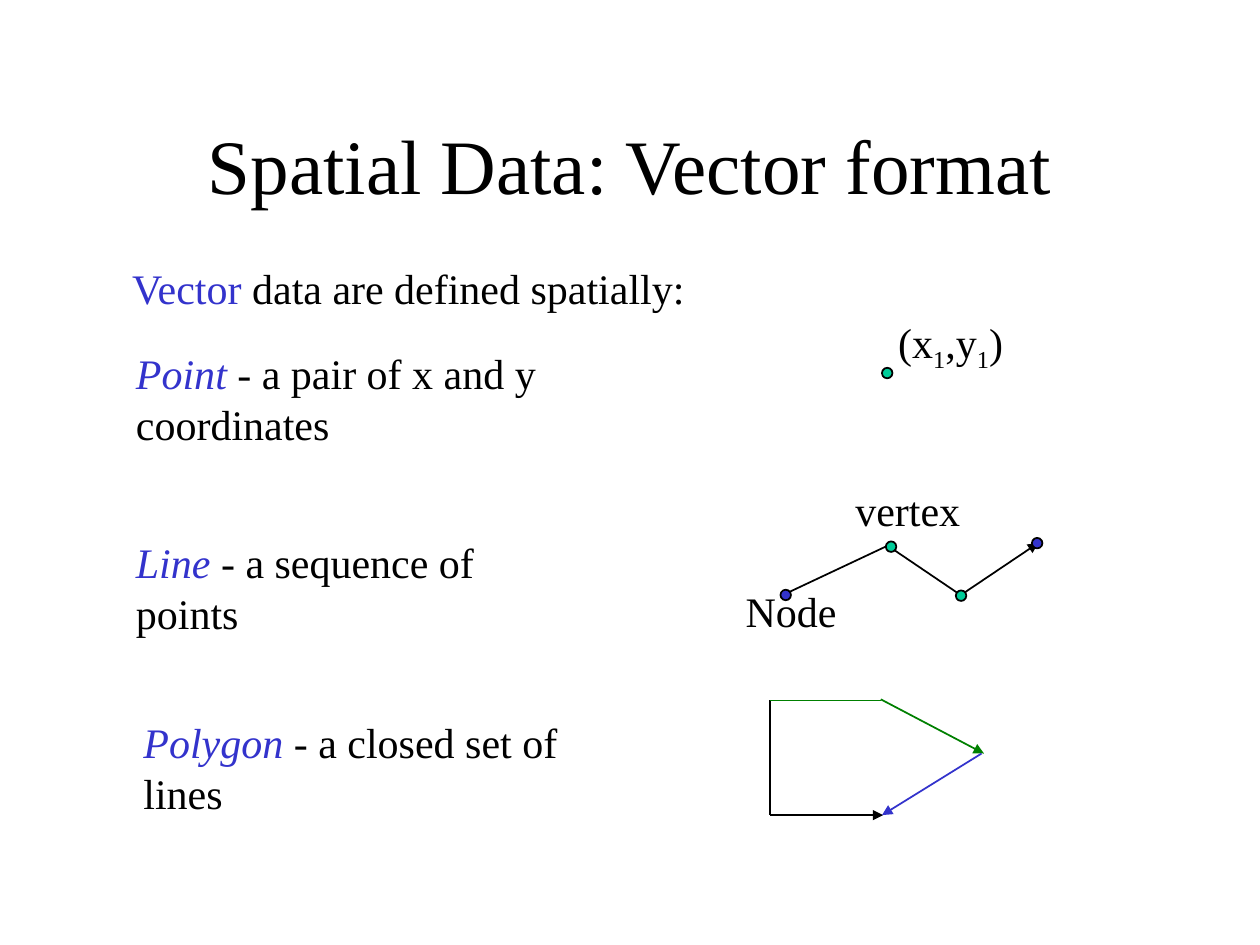
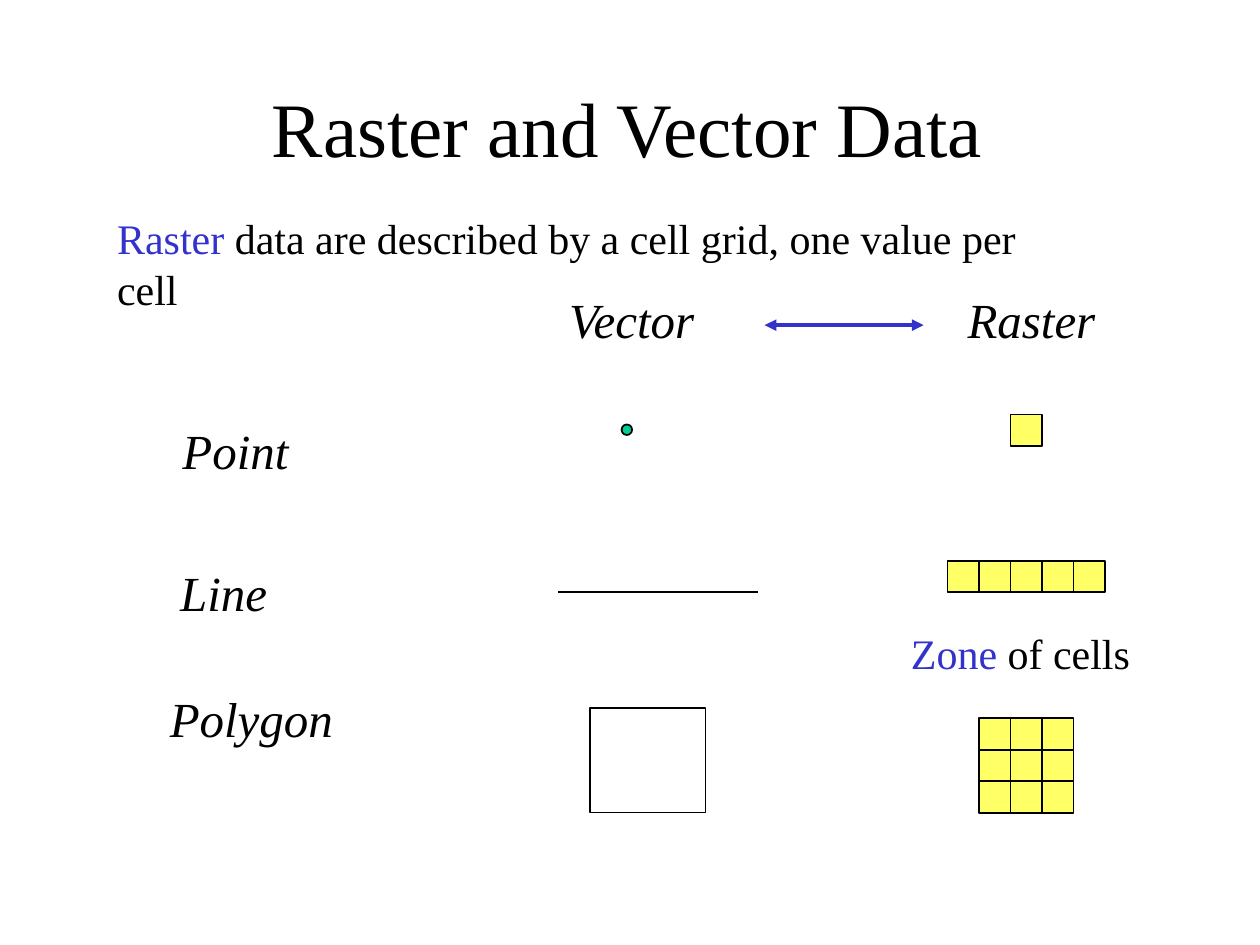
from lxml import etree
from pptx import Presentation
from pptx.dml.color import RGBColor
from pptx.enum.shapes import MSO_CONNECTOR, MSO_SHAPE
from pptx.enum.text import MSO_ANCHOR, PP_ALIGN
from pptx.oxml.ns import qn
from pptx.util import Pt

STRAIGHT = MSO_CONNECTOR.STRAIGHT
OVAL = MSO_SHAPE.OVAL
RECTANGLE = MSO_SHAPE.RECTANGLE
LEFT = PP_ALIGN.LEFT
CENTER = PP_ALIGN.CENTER
TOP = MSO_ANCHOR.TOP
MIDDLE = MSO_ANCHOR.MIDDLE

FONT = "Times New Roman"
color = RGBColor.from_string
BLACK = "000000"
BLUE = "3333CC"
TEAL = "00CC99"
GREEN = "008000"
YELLOW = "FFFF66"
DOT = 6
CELL = 18

deck = Presentation()
deck.slide_width = Pt(720)
deck.slide_height = Pt(540)
blank = deck.slide_layouts[6]
vector_page = deck.slides.add_slide(blank)
raster_page = deck.slides.add_slide(blank)


def add_text(page, left, top, width, height, runs, size=24, wrap=True, align=LEFT, anchor=TOP):
    box = page.shapes.add_textbox(Pt(left), Pt(top), Pt(width), Pt(height))
    frame = box.text_frame
    frame.word_wrap = wrap
    frame.vertical_anchor = anchor
    para = frame.paragraphs[0]
    para.alignment = align
    for text, ink, italic, baseline in runs:
        span = para.add_run()
        span.text = text
        span.font.name = FONT
        span.font.size = Pt(size)
        span.font.italic = italic
        span.font.color.rgb = color(ink)
        if baseline:
            span.font._element.set("baseline", str(baseline))


def add_line(page, start, end, ink=BLACK, weight=1, arrows=()):
    line = page.shapes.add_connector(STRAIGHT, Pt(start[0]), Pt(start[1]), Pt(end[0]), Pt(end[1]))
    line.line.color.rgb = color(ink)
    line.line.width = Pt(weight)
    outline = line.line._get_or_add_ln()
    for arrow in arrows:
        etree.SubElement(outline, qn(f"a:{arrow}"), type="triangle")
    etree.SubElement(line._element.spPr, qn("a:effectLst"))


for page, title, left, top in [
    (vector_page, "Spatial Data: Vector format", 54, 48.25),
    (raster_page, "Raster and Vector Data", 52.5, 27.4),
]:
    add_text(page, left, top, 612, 90, [(title, BLACK, False, 0)], 44, True, CENTER, MIDDLE)

for page, left, top, width, height, term, rest, italic in [
    (vector_page, 68.4, 146.2, 338, 36, "Vector", " data are defined spatially:", False),
    (vector_page, 70.6, 195.1, 356, 65, "Point", " - a pair of x and y coordinates", True),
    (vector_page, 70.6, 303.1, 268, 65, "Line", " - a sequence of points", True),
    (vector_page, 74.9, 406.1, 298, 65, "Polygon", " - a closed set of lines", True),
    (raster_page, 59.8, 118.1, 564, 65, "Raster", " data are described by a cell grid, one value per cell", False),
    (raster_page, 513.4, 355, 146, 36, "Zone", " of cells", False),
]:
    add_text(page, left, top, width, height, [(term, BLUE, italic, 0), (rest, BLACK, False, 0)])

coordinates = [("(x", 0), ("1", -25000), (",y", 0), ("1", -25000), (")", 0)]
add_text(vector_page, 506.2, 177.1, 76.3, 36,
         [(text, BLACK, False, baseline) for text, baseline in coordinates], wrap=False)
for label, left, top, width in [("Node", 419, 331.2, 66.2), ("vertex", 481.7, 273.6, 74.2)]:
    add_text(vector_page, left, top, width, 36, [(label, BLACK, False, 0)], wrap=False)

for start, end, ink, arrows in [
    ((447.8, 339.8), (509, 311), BLACK, ()),
    ((508.3, 312.5), (548.6, 339.8), BLACK, ()),
    ((549.4, 339.8), (593.3, 310.3), BLACK, ["tailEnd"]),
    ((439.9, 400.3), (439.9, 465.8), BLACK, ()),
    ((439.9, 465.8), (504.7, 465.8), BLACK, ["tailEnd"]),
    ((439.9, 400.3), (503.3, 400.3), GREEN, ()),
    ((503.3, 399.6), (562.3, 430.6), GREEN, ["tailEnd"]),
    ((504, 465.8), (560.9, 430.6), BLUE, ["headEnd"]),
]:
    add_line(vector_page, start, end, ink, arrows=arrows)

for label, left, top, width in [
    ("Point", 97.2, 236.9, 100.8),
    ("Line", 95.8, 318.2, 64.1),
    ("Polygon", 90, 390.2, 108),
    ("Vector", 318.2, 162, 89.3),
    ("Raster", 545.8, 162, 87.8),
]:
    add_text(raster_page, left, top, width, 41, [(label, BLACK, True, 0)], 28, label == "Point")

add_line(raster_page, (437, 185.8), (527.8, 185.8), BLUE, 2.25, ["headEnd", "tailEnd"])
add_line(raster_page, (319, 338.4), (433.4, 338.4))

figures = [(raster_page, RECTANGLE, 337, 404.6, 66.2, 59.8, None)]
for page, left, top, fill in [
    (vector_page, 504, 210.2, TEAL),
    (vector_page, 546.2, 337.4, TEAL),
    (vector_page, 506.2, 309.4, TEAL),
    (vector_page, 446, 337, BLUE),
    (vector_page, 589.7, 307.4, BLUE),
    (raster_page, 355.2, 242.6, TEAL),
]:
    figures.append((page, OVAL, left, top, DOT, DOT, fill))

for left, top, columns, rows in [(577.4, 236.9, 1, 1), (541.4, 320.4, 5, 1), (559.4, 410.4, 3, 3)]:
    for row in range(rows):
        for column in range(columns):
            figures.append((raster_page, RECTANGLE, left + column * CELL, top + row * CELL,
                            CELL, CELL, YELLOW))

for page, kind, left, top, width, height, fill in figures:
    shape = page.shapes.add_shape(kind, Pt(left), Pt(top), Pt(width), Pt(height))
    shape.shadow.inherit = False
    if fill:
        shape.fill.solid()
        shape.fill.fore_color.rgb = color(fill)
    else:
        shape.fill.background()
    shape.line.color.rgb = color(BLACK)
    shape.line.width = Pt(1)

deck.save("out.pptx")
